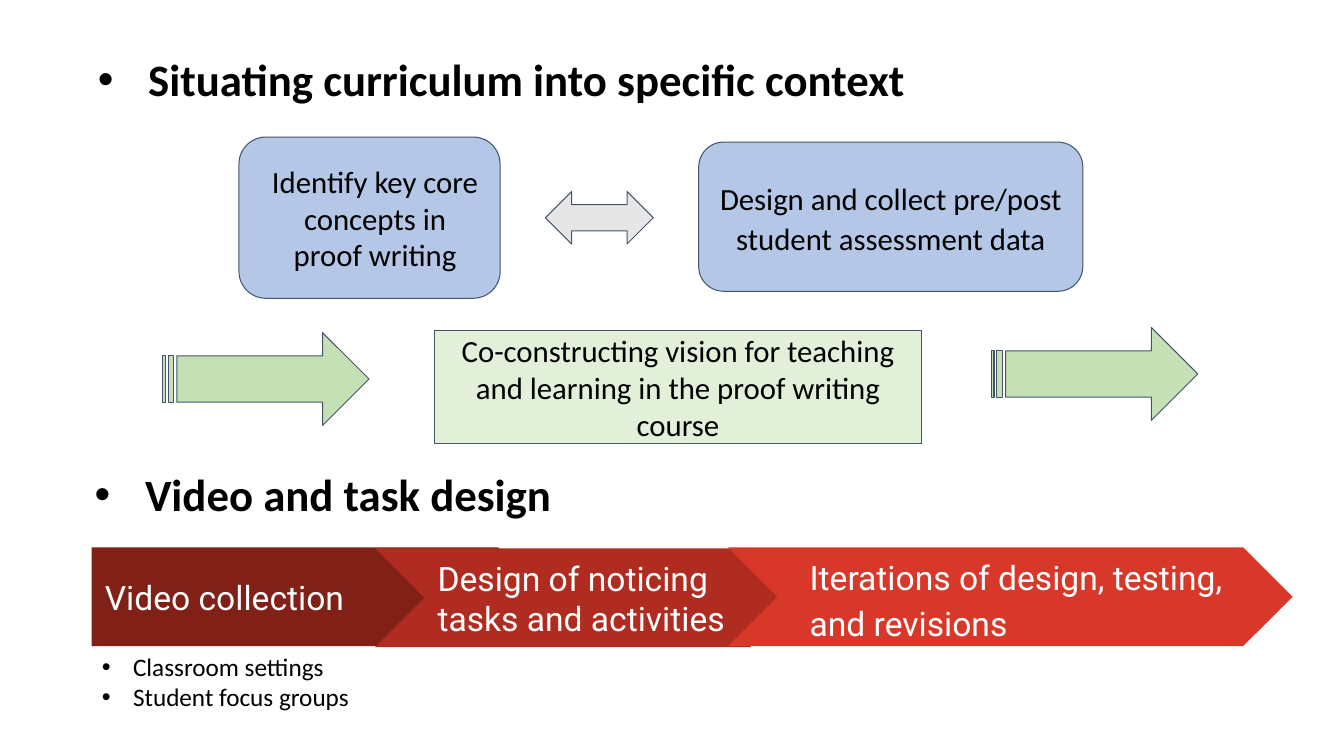
"""Build a slide on situating a curriculum and designing videos and tasks."""
import dataclasses

import pptx
import pptx.dml.color
import pptx.enum.shapes
import pptx.enum.text
import pptx.util
from lxml import etree

Inches = pptx.util.Inches
SHAPE = pptx.enum.shapes.MSO_SHAPE
ALIGN = pptx.enum.text.PP_ALIGN
ANCHOR = pptx.enum.text.MSO_ANCHOR


@dataclasses.dataclass(frozen=True)
class Theme:
    """Colours, fonts and type sizes of the slide."""
    ink: str = "000000"
    light: str = "FFFFFF"
    outline: str = "44546A"
    concept: str = "B4C7E7"
    exchange: str = "E7E6E6"
    flow: str = "C5E0B4"
    vision: str = "E2F0D9"
    steps: tuple = ("802017", "B02C20", "D83829")
    font: str = "Calibri"
    step_font: str = "Roboto"
    heading: int = 32
    step: int = 24
    box: int = 22
    detail: int = 18


THEME = Theme()

CONTEXT_HEADING = "Situating curriculum into specific context"
CONCEPTS = "Identify key core concepts in proof writing"
ASSESSMENT = "Design and collect pre/post student assessment data"
VISION = "Co-constructing vision for teaching and learning in the proof writing course"
DESIGN_HEADING = "Video and task design"
STEPS = [
    ("Video collection", SHAPE.PENTAGON, (0.91, 5.43, 4.52), {}),
    ("Design of noticing tasks and activities", SHAPE.CHEVRON, (3.72, 5.44, 4.21), {}),
    ("Iterations of design, testing, and revisions", SHAPE.CHEVRON, (7.22, 5.43, 5.6),
     {"indent": 0.19, "spacing": 1.15}),
]
STEP_HEIGHT = 0.98
VIDEO_SOURCES = ["Classroom settings", "Student focus groups"]

FLOW_ARROWS = [(1.61, 3.3), (9.83, 3.25)]
FLOW_SIZE = (2.05, 0.92)
WIDE_INSETS = (0.13, 0.13)
TEXT_INSETS = (0.1, 0.05)


def rgb(value):
    """Return a colour from its hex form."""
    return pptx.dml.color.RGBColor.from_string(value)


def write(frame, lines, size=THEME.box, font=THEME.font, color=THEME.ink, bold=False,
          align=ALIGN.LEFT, anchor=ANCHOR.TOP, insets=WIDE_INSETS, spacing=1.0,
          after=0, indent=0, bullet=False):
    """Write lines as formatted paragraphs into a text frame."""
    frame.word_wrap = True
    frame.auto_size = pptx.enum.text.MSO_AUTO_SIZE.NONE
    frame.vertical_anchor = anchor
    frame.margin_left = frame.margin_right = Inches(insets[0])
    frame.margin_top = frame.margin_bottom = Inches(insets[1])
    for index, line in enumerate(lines):
        paragraph = frame.add_paragraph() if index else frame.paragraphs[0]
        paragraph.alignment = align
        paragraph.line_spacing = spacing
        paragraph.space_before = pptx.util.Pt(0)
        paragraph.space_after = pptx.util.Pt(after)
        run = paragraph.add_run()
        run.text = line
        run.font.size = pptx.util.Pt(size)
        run.font.name = font
        run.font.bold = bold
        run.font.color.rgb = rgb(color)
        properties = paragraph._p.get_or_add_pPr()
        properties.set("marL", str(Inches(indent)))
        properties.set("indent", str(-Inches(indent) if bullet else 0))
        if bullet:
            namespace = "{%s}" % properties.nsmap["a"]
            etree.SubElement(properties, namespace + "buFont", typeface="Arial")
            etree.SubElement(properties, namespace + "buChar", char="•")


def place(shape, left, top, width, height):
    """Move and size a placeholder in inches."""
    shape.left, shape.top = Inches(left), Inches(top)
    shape.width, shape.height = Inches(width), Inches(height)


def draw(slide, kind, box, fill, outlined=True):
    """Add a flat filled shape at a box given in inches."""
    shape = slide.shapes.add_shape(kind, *map(Inches, box))
    shape.shadow.inherit = False
    shape.fill.solid()
    shape.fill.fore_color.rgb = rgb(fill)
    if outlined:
        shape.line.color.rgb = rgb(THEME.outline)
        shape.line.width = pptx.util.Pt(0.75)
    else:
        shape.line.fill.background()
    return shape


def add_context(slide):
    """Add the upper diagram with its heading."""
    heading = slide.shapes.title
    place(heading, 0.84, 0.44, 10.94, 1.39)
    write(heading.text_frame, [CONTEXT_HEADING], size=THEME.heading, bold=True,
          spacing=0.9, indent=0.5, bullet=True)

    draw(slide, SHAPE.FLOWCHART_ALTERNATE_PROCESS, (2.37, 1.36, 2.59, 1.6), THEME.concept)
    concepts = slide.shapes.add_textbox(*map(Inches, (2.53, 1.48, 2.38, 1.38)))
    write(concepts.text_frame, [CONCEPTS], align=ALIGN.CENTER)

    assessment = draw(slide, SHAPE.ROUNDED_RECTANGLE, (6.93, 1.41, 3.81, 1.48), THEME.concept)
    write(assessment.text_frame, [ASSESSMENT], align=ALIGN.CENTER, anchor=ANCHOR.MIDDLE,
          spacing=1.08, after=10.7)
    draw(slide, SHAPE.LEFT_RIGHT_ARROW, (5.41, 1.9, 1.07, 0.52), THEME.exchange)

    for corner in FLOW_ARROWS:
        draw(slide, SHAPE.STRIPED_RIGHT_ARROW, corner + FLOW_SIZE, THEME.flow)
    vision = draw(slide, SHAPE.RECTANGLE, (4.31, 3.28, 4.83, 1.12), THEME.vision)
    write(vision.text_frame, [VISION], align=ALIGN.CENTER, anchor=ANCHOR.MIDDLE)


def add_design(slide):
    """Add the lower heading, the chain of steps and the video sources."""
    heading = slide.shapes.add_textbox(*map(Inches, (0.84, 4.58, 8.17, 0.64)))
    write(heading.text_frame, [DESIGN_HEADING], size=THEME.heading, bold=True,
          insets=TEXT_INSETS, indent=0.5, bullet=True)

    for (label, kind, corner, layout), fill in zip(STEPS, THEME.steps):
        step = draw(slide, kind, corner + (STEP_HEIGHT,), fill, outlined=False)
        write(step.text_frame, [label], size=THEME.step, font=THEME.step_font,
              color=THEME.light, anchor=ANCHOR.MIDDLE, **layout)

    sources = slide.placeholders[1]
    place(sources, 0.91, 6.41, 3.26, 0.71)
    write(sources.text_frame, VIDEO_SOURCES, size=THEME.detail, insets=TEXT_INSETS,
          indent=0.31, bullet=True)


def main():
    """Create the presentation and save it."""
    deck = pptx.Presentation()
    deck.slide_width, deck.slide_height = Inches(13.33), Inches(7.5)
    slide = deck.slides.add_slide(deck.slide_layouts[1])
    add_context(slide)
    add_design(slide)
    deck.save("out.pptx")


if __name__ == "__main__":
    main()
